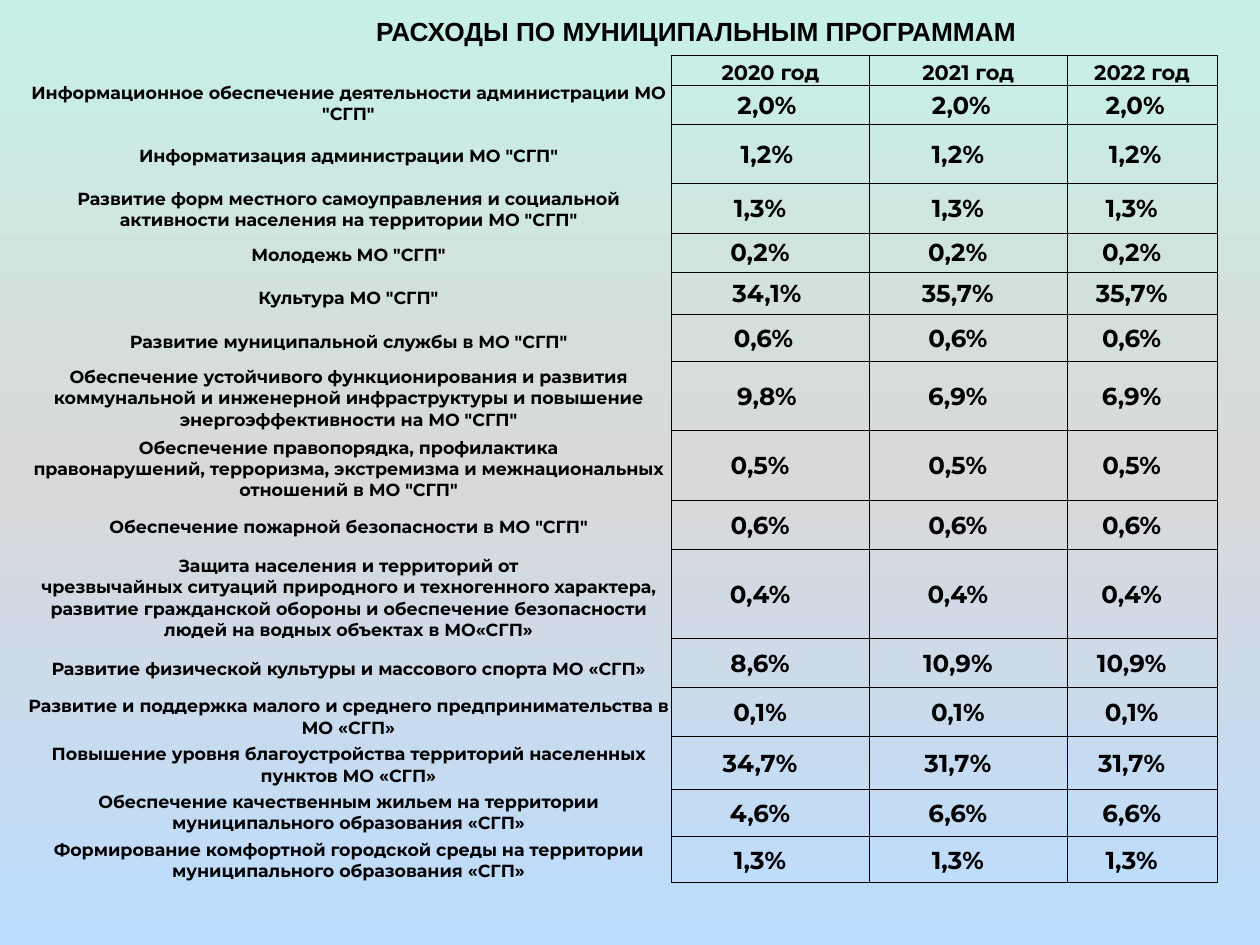
from copy import deepcopy
from dataclasses import dataclass

from lxml.etree import SubElement
from pptx import Presentation
from pptx.dml.color import RGBColor
from pptx.enum.text import MSO_ANCHOR, MSO_AUTO_SIZE, PP_ALIGN
from pptx.oxml.ns import qn
from pptx.util import Inches, Pt

WIDE, HIGH = Inches(10), Inches(7.5)
UNIT = WIDE // 1000
HUES = {"ink": "000000", "mint": "C6F0E7", "grey": "D9D9D9", "sky": "BBDDFF"}
PLAIN = "{2D5ABB26-0587-4C30-8999-92F81FD0307C}"
SPACE, TAIL = 5.5, 16.5


@dataclass
class Grid:
    left: int
    top: int
    cols: list[int]
    rows: list[int]
    lined: bool = False


@dataclass
class Entry:
    label: str
    rates: tuple[str, str, str]
    leads: tuple[int, int, int] = (0, 0, 0)


YEARS = ["2020 год", "2021 год", "2022 год"]
ITEMS = [
    Entry('Информационное обеспечение деятельности администрации МО "СГП"',
          ("2,0%", "2,0%", "2,0%"), (2, 1, 1)),
    Entry('Информатизация администрации МО "СГП"',
          ("1,2%", "1,2%", "1,2%"), (2, 0, 1)),
    Entry('Развитие форм местного самоуправления и социальной активности '
          'населения на территории МО "СГП"', ("1,3%", "1,3%", "1,3%")),
    Entry('Молодежь МО "СГП"', ("0,2%", "0,2%", "0,2%")),
    Entry('Культура МО "СГП"', ("34,1%", "35,7%", "35,7%"), (2, 0, 0)),
    Entry('Развитие муниципальной службы в МО "СГП"',
          ("0,6%", "0,6%", "0,6%"), (1, 0, 0)),
    Entry('Обеспечение устойчивого функционирования и развития коммунальной '
          'и инженерной инфраструктуры и повышение энергоэффективности на МО "СГП"',
          ("9,8%", "6,9%", "6,9%"), (2, 0, 0)),
    Entry('Обеспечение правопорядка, профилактика\vправонарушений, терроризма, '
          'экстремизма и межнациональных отношений в МО "СГП"',
          ("0,5%", "0,5%", "0,5%")),
    Entry('Обеспечение пожарной безопасности в МО "СГП"', ("0,6%", "0,6%", "0,6%")),
    Entry('Защита населения и территорий от\vчрезвычайных ситуаций природного и '
          'техногенного характера, развитие гражданской обороны и обеспечение '
          'безопасности людей на водных объектах в МО«СГП»',
          ("0,4%", "0,4%", "0,4%")),
    Entry('Развитие физической культуры и массового спорта МО «СГП»',
          ("8,6%", "10,9%", "10,9%")),
    Entry('Развитие и поддержка малого и среднего предпринимательства в МО «СГП»',
          ("0,1%", "0,1%", "0,1%")),
    Entry('Повышение уровня благоустройства территорий населенных пунктов МО «СГП»',
          ("34,7%", "31,7%", "31,7%")),
    Entry('Обеспечение качественным жильем на территории муниципального '
          'образования «СГП»', ("4,6%", "6,6%", "6,6%")),
    Entry('Формирование комфортной городской среды на территории муниципального '
          'образования «СГП»', ("1,3%", "1,3%", "1,3%")),
]
NAMES = Grid(20, 63, [513], [38, 45, 40, 32, 36, 34, 56, 56, 37, 75] + [38] * 5)
RATES = Grid(533, 44, [157, 157, 119],
             [24, 31, 47, 39, 31, 34, 37, 55, 55, 39, 71, 39, 39, 42, 37, 37], True)


def span(n: float) -> int:
    return int(n * UNIT)


def write(frame, text: str, size: int, face: str) -> None:
    para = frame.paragraphs[0]
    para.text = text
    para.alignment = PP_ALIGN.CENTER
    for run in para.runs:
        run.font.size, run.font.name, run.font.bold = Pt(size), face, True
        run.font.color.rgb = RGBColor.from_string(HUES["ink"])


def rule(cell) -> None:
    props = cell._tc.get_or_add_tcPr()
    for side in ("a:lnL", "a:lnR", "a:lnT", "a:lnB"):
        line = SubElement(props, qn(side), w=str(Pt(0.5)))
        fill = SubElement(line, qn("a:solidFill"))
        SubElement(fill, qn("a:srgbClr"), val=HUES["ink"])


def fill_cell(cell, text: str, size: int, lead: float = 0, tail: float = 0,
              anchor=MSO_ANCHOR.MIDDLE) -> None:
    write(cell.text_frame, text, size, "Montserrat")
    cell.vertical_anchor = anchor
    cell.margin_left, cell.margin_right = span(1 + lead), span(1 + tail)
    cell.margin_top, cell.margin_bottom = span(1), 0


def add_grid(slide, grid: Grid):
    frame = slide.shapes.add_table(
        len(grid.rows), len(grid.cols), span(grid.left), span(grid.top),
        span(sum(grid.cols)), span(sum(grid.rows)))
    table = frame.table
    table.first_row = table.horz_banding = False
    table._tbl.tblPr.find(qn("a:tableStyleId")).text = PLAIN
    for col, n in zip(table.columns, grid.cols):
        col.width = span(n)
    for row, n in zip(table.rows, grid.rows):
        row.height = span(n)
    for cell in table.iter_cells():
        if grid.lined:
            rule(cell)
        cell.fill.background()
    return table


def paint(slide) -> None:
    fill = slide.background.fill
    fill.gradient()
    fill.gradient_angle = 270
    stops = slide._element.find(".//" + qn("a:gsLst"))
    stops.append(deepcopy(stops[-1]))
    for stop, hue, pos in zip(fill.gradient_stops, ("mint", "grey", "sky"), (0, 0.5, 1)):
        stop.color.rgb = RGBColor.from_string(HUES[hue])
        stop.position = pos


def add_title(slide, text: str) -> None:
    title = slide.shapes.title
    title.left, title.top, title.width, title.height = map(span, (133, 5, 839, 39))
    frame = title.text_frame
    frame.auto_size, frame.word_wrap = MSO_AUTO_SIZE.NONE, True
    frame.vertical_anchor = MSO_ANCHOR.MIDDLE
    write(frame, text, 15, "Arial")


def main() -> None:
    deck = Presentation()
    deck.slide_width, deck.slide_height = WIDE, HIGH
    slide = deck.slides.add_slide(deck.slide_layouts[5])
    paint(slide)
    add_title(slide, "РАСХОДЫ ПО МУНИЦИПАЛЬНЫМ ПРОГРАММАМ")
    names, rates = add_grid(slide, NAMES), add_grid(slide, RATES)
    for c, year in enumerate(YEARS):
        fill_cell(rates.cell(0, c), year, 12, anchor=MSO_ANCHOR.BOTTOM)
    for r, item in enumerate(ITEMS):
        fill_cell(names.cell(r, 0), item.label, 10)
        for c, (rate, lead) in enumerate(zip(item.rates, item.leads)):
            fill_cell(rates.cell(r + 1, c), rate, 14, lead * SPACE, TAIL)
    deck.save("out.pptx")


if __name__ == "__main__":
    main()
